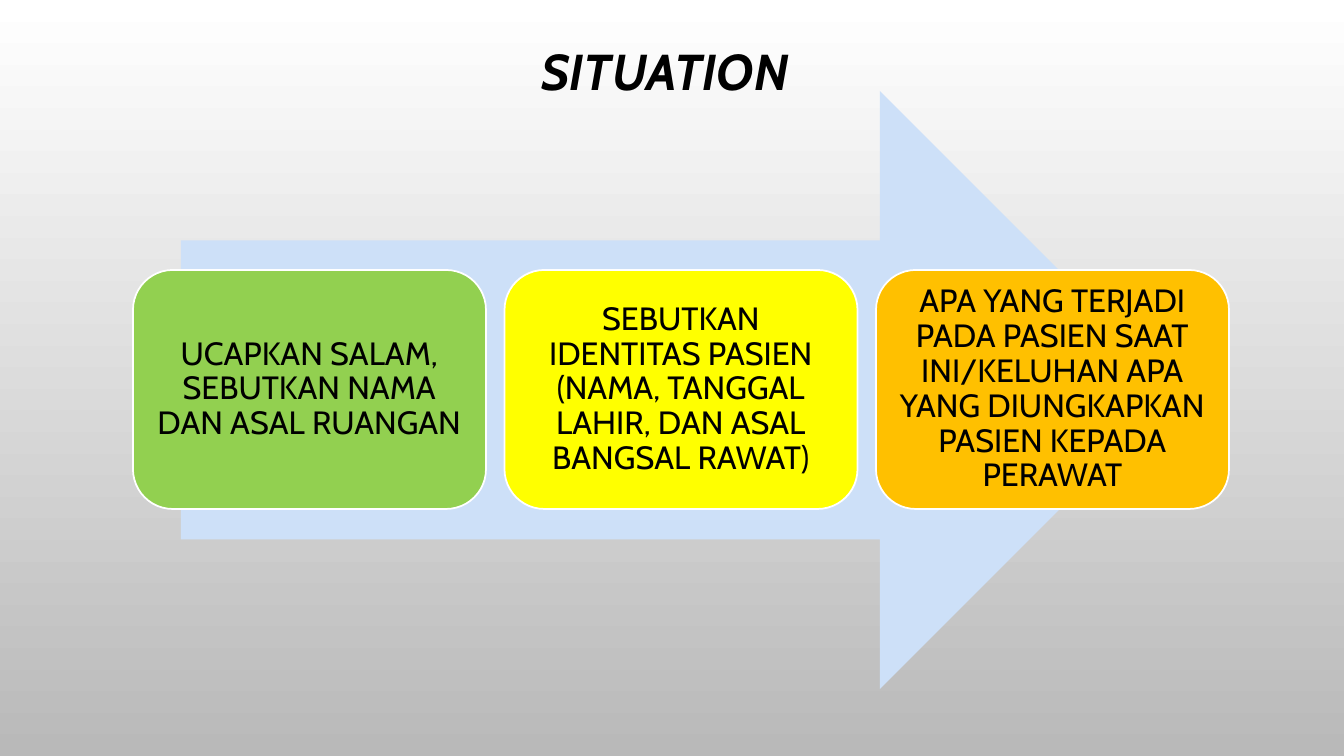
import pptx
import pptx.util
import pptx.dml.color
import pptx.enum.shapes
import pptx.enum.text

# Content
TITLE = "SITUATION"
STEPS = [
    ("UCAPKAN SALAM, SEBUTKAN NAMA DAN ASAL RUANGAN", "92D050"),
    ("SEBUTKAN IDENTITAS PASIEN (NAMA, TANGGAL LAHIR, DAN ASAL BANGSAL RAWAT)", "FFFF00"),
    ("APA YANG TERJADI PADA PASIEN SAAT INI/KELUHAN APA YANG DIUNGKAPKAN PASIEN KEPADA PERAWAT", "FFC000"),
]

# Theme and places, in px
THEME = {
    "font": "Cabin", "text": "000000", "edge": "FFFFFF", "arrow": "CDE0F8",
    "top": "FFFFFF", "base": "B9B9B9", "title": 36, "body": 23, "line": 1.25,
}
SLIDE = (1344, 756)
HEAD = (94, 24, 1142, 101)
ARROW = (181, 91, 998, 598)
ROW = (133, 270, 1096, 239)
WIDTH = 353
INSET = 10
SCALE = 914400 / 100.8

SHAPE = pptx.enum.shapes.MSO_SHAPE


def emu(px):
    return pptx.util.Emu(round(px * SCALE))


def color(name):
    return pptx.dml.color.RGBColor.from_string(name)


def write(frame, text, size, strong=False):
    frame.text = text
    frame.word_wrap = True
    frame.auto_size = pptx.enum.text.MSO_AUTO_SIZE.NONE
    frame.vertical_anchor = pptx.enum.text.MSO_ANCHOR.MIDDLE
    para = frame.paragraphs[0]
    para.alignment = pptx.enum.text.PP_ALIGN.CENTER
    para.line_spacing = 0.9
    font = para.runs[0].font
    font.name, font.size = THEME["font"], pptx.util.Pt(size)
    font.bold = font.italic = strong
    font.color.rgb = color(THEME["text"])


def draw(slide, kind, place, fill):
    shape = slide.shapes.add_shape(kind, *map(emu, place))
    shape.shadow.inherit = False
    shape.fill.solid()
    shape.fill.fore_color.rgb = color(fill)
    shape.line.fill.background()
    return shape


def main():
    deck = pptx.Presentation()
    deck.slide_width, deck.slide_height = map(emu, SLIDE)
    slide = deck.slides.add_slide(deck.slide_layouts.get_by_name("Title Only"))

    # Background, light at the top
    back = slide.background.fill
    back.gradient()
    back.gradient_angle = 270
    for stop, spot, name in zip(back.gradient_stops, (0, 1), ("top", "base")):
        stop.position = spot
        stop.color.rgb = color(THEME[name])

    # Title
    title = slide.shapes.title
    title.left, title.top, title.width, title.height = map(emu, HEAD)
    write(title.text_frame, TITLE, THEME["title"], strong=True)

    # Arrow behind the steps
    draw(slide, SHAPE.RIGHT_ARROW, ARROW, THEME["arrow"])

    # Steps, spread evenly over the row
    left, top, span, height = ROW
    pitch = (span - WIDTH) / (len(STEPS) - 1)
    for i, (text, fill) in enumerate(STEPS):
        place = (left + i * pitch, top, WIDTH, height)
        box = draw(slide, SHAPE.ROUNDED_RECTANGLE, place, fill)
        box.line.color.rgb = color(THEME["edge"])
        box.line.width = pptx.util.Pt(THEME["line"])
        frame = box.text_frame
        frame.margin_left = frame.margin_right = emu(INSET)
        frame.margin_top = frame.margin_bottom = emu(INSET)
        write(frame, text, THEME["body"])

    deck.save("out.pptx")


if __name__ == "__main__":
    main()
